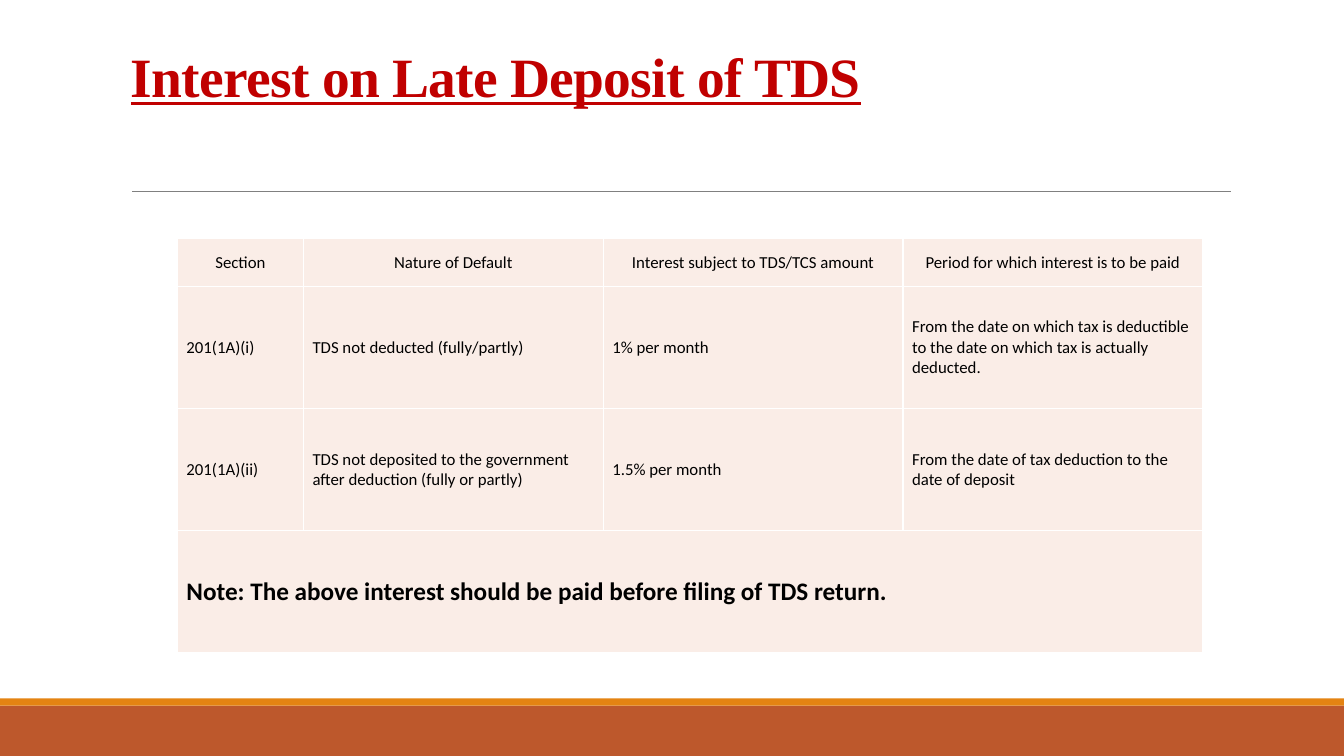
from lxml import etree
from pptx import Presentation
from pptx.dml.color import RGBColor
from pptx.enum.shapes import MSO_CONNECTOR, MSO_SHAPE
from pptx.enum.text import MSO_ANCHOR, PP_ALIGN
from pptx.oxml.ns import qn
from pptx.util import Inches, Pt

WIDTH, HEIGHT = 13.33, 7.5
BORDER_SIDES = ("a:lnL", "a:lnR", "a:lnT", "a:lnB")
TITLE = "Interest on Late Deposit of TDS"
ROWS = [
    ["Section", "Nature of Default", "Interest subject to TDS/TCS amount",
     "Period for which interest is to be paid"],
    ["201(1A)(i)", "TDS not deducted (fully/partly)", "1% per month",
     "From the date on which tax is deductible to the date on which tax is "
     "actually deducted."],
    ["201(1A)(ii)",
     "TDS not deposited to the government after deduction (fully or partly)",
     "1.5% per month", "From the date of tax deduction to the date of deposit"],
    ["Note: The above interest should be paid before filing of TDS return."],
]


def color(hex_value):
    return RGBColor.from_string(hex_value)


def style_font(run, name, size, hex_value, bold=False):
    font = run.font
    font.name, font.size, font.bold = name, Pt(size), bold
    font.color.rgb = color(hex_value)


def add_band(slide, left, top, width, height, fill):
    band = slide.shapes.add_shape(MSO_SHAPE.RECTANGLE, Inches(left), Inches(top),
                                  Inches(width), Inches(height))
    band.shadow.inherit = False
    band.fill.solid()
    band.fill.fore_color.rgb = color(fill)
    band.line.fill.background()


def add_footer(slide, left, top, width, height):
    stripe = 0.07
    add_band(slide, left, top + stripe, width, height - stripe, "BD582C")
    add_band(slide, left, top, width, stripe, "E48312")


def add_rule(slide, left, top, width):
    y = Inches(top)
    rule = slide.shapes.add_connector(MSO_CONNECTOR.STRAIGHT, Inches(left), y,
                                      Inches(left + width), y)
    rule.line.color.rgb = color("808080")
    rule.line.width = Pt(0.5)
    etree.SubElement(rule._element.spPr, qn("a:effectLst"))


def add_title(slide, left, top, width, height):
    box = slide.shapes.add_textbox(Inches(left), Inches(top),
                                   Inches(width), Inches(height))
    frame = box.text_frame
    frame.word_wrap = True
    frame.vertical_anchor = MSO_ANCHOR.MIDDLE
    frame.text = TITLE
    paragraph = frame.paragraphs[0]
    paragraph.line_spacing = 0.85
    run = paragraph.runs[0]
    style_font(run, "Times New Roman", 39.6, "C00000", bold=True)
    run.font.underline = True
    run.font._element.set("spc", "-50")


def add_borders(cell, hex_value, width):
    properties = cell._tc.get_or_add_tcPr()
    for index, side in enumerate(BORDER_SIDES):
        line = etree.Element(qn(side), w=str(Pt(width)))
        fill = etree.SubElement(line, qn("a:solidFill"))
        etree.SubElement(fill, qn("a:srgbClr"), val=hex_value)
        properties.insert(index, line)


def style_cell(cell, is_header, is_note):
    cell.fill.solid()
    cell.fill.fore_color.rgb = color("FAEDE7")
    add_borders(cell, "FFFFFF", 1)
    cell.vertical_anchor = MSO_ANCHOR.MIDDLE
    cell.margin_left = Inches(0.01 if is_header else 0.09)
    cell.margin_right = cell.margin_top = Inches(0.01)
    cell.margin_bottom = 0
    paragraph = cell.text_frame.paragraphs[0]
    paragraph.alignment = PP_ALIGN.CENTER if is_header else PP_ALIGN.LEFT
    for run in paragraph.runs:
        style_font(run, "Calibri", 18 if is_note else 12, "000000", bold=is_note)


def add_interest_table(slide, left, top, width, height):
    columns, last = len(ROWS[0]), len(ROWS) - 1
    section_width, header_height = 1.25, 0.47
    table = slide.shapes.add_table(len(ROWS), columns, Inches(left), Inches(top),
                                   Inches(width), Inches(height)).table
    for index, column in enumerate(table.columns):
        column.width = Inches(section_width if index == 0 else
                              (width - section_width) / (columns - 1))
    for index, row in enumerate(table.rows):
        row.height = Inches(header_height if index == 0 else
                            (height - header_height) / last)
    # The note fills the whole last row
    table.cell(last, 0).merge(table.cell(last, columns - 1))
    for row_index, texts in enumerate(ROWS):
        for column_index, text in enumerate(texts):
            table.cell(row_index, column_index).text = text
        for column_index in range(columns):
            style_cell(table.cell(row_index, column_index),
                       row_index == 0, row_index == last)


def main():
    presentation = Presentation()
    presentation.slide_width = Inches(WIDTH)
    presentation.slide_height = Inches(HEIGHT)
    slide = presentation.slides.add_slide(presentation.slide_layouts[6])
    add_footer(slide, 0, 6.93, WIDTH, HEIGHT - 6.93)
    add_rule(slide, 1.31, 1.9, 10.9)
    add_title(slide, 1.2, 0.31, 11, 0.97)
    add_interest_table(slide, 1.76, 2.37, 10.17, 4.1)
    presentation.save("out.pptx")


if __name__ == "__main__":
    main()
